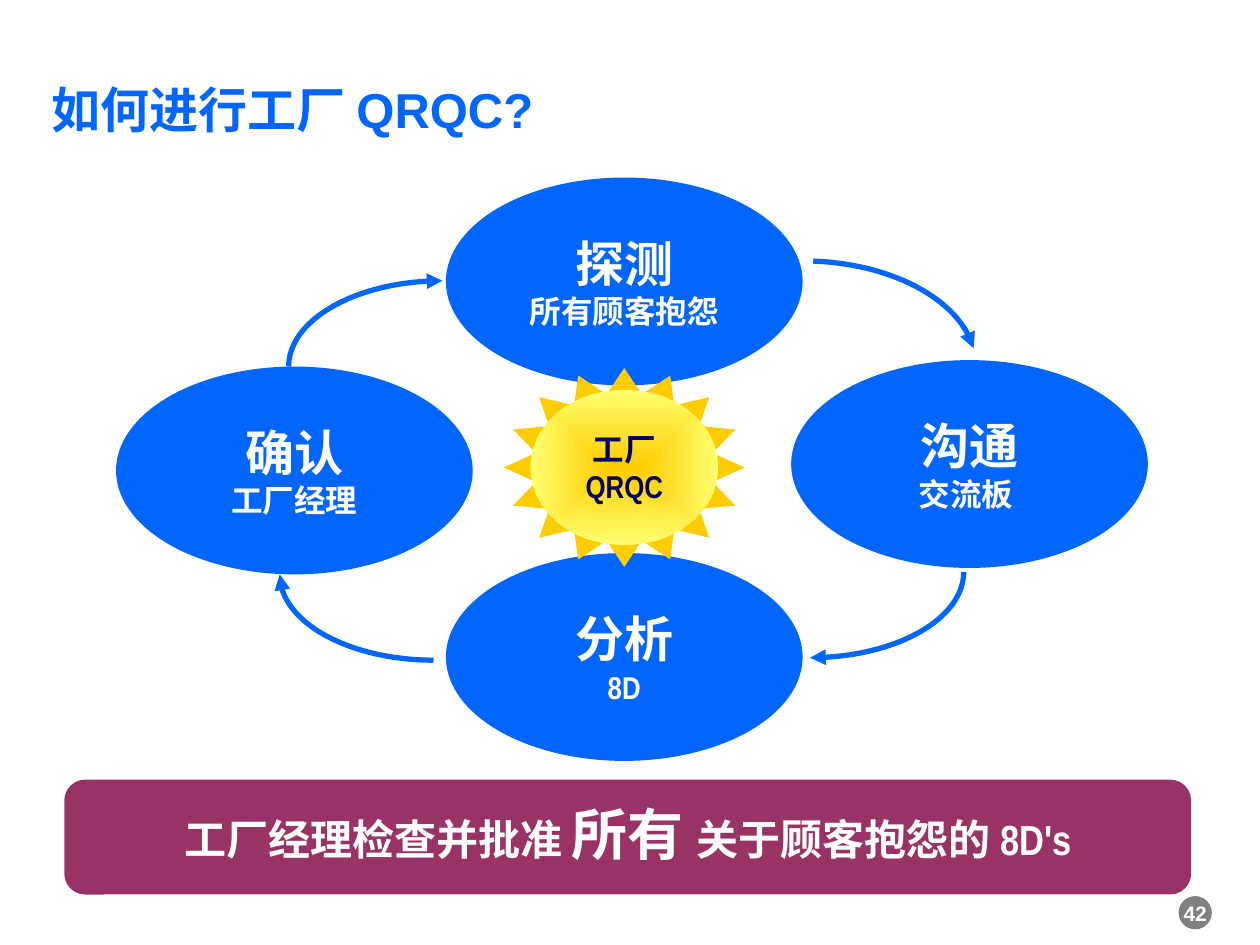
from dataclasses import dataclass
from math import cos, radians, sin

from pptx import Presentation
from pptx.dml.color import RGBColor as RGB
from pptx.enum.shapes import MSO_SHAPE as SHAPE
from pptx.enum.text import MSO_ANCHOR as ANCHOR, MSO_AUTO_SIZE as AUTO, PP_ALIGN as ALIGN
from pptx.oxml import parse_xml
from pptx.oxml.ns import nsdecls
from pptx.util import Cm, Pt


@dataclass(frozen=True)
class Theme:
    """Colours, fonts and type sizes of the slide."""
    blue: str = "0066FF"
    navy: str = "000066"
    plum: str = "993366"
    gold: str = "FFCC00"
    lemon: str = "FFFF6F"
    grey: str = "808080"
    white: str = "FFFFFF"
    sans: str = "Arial"
    narrow: str = "Arial Narrow"
    title: int = 28
    step: int = 28
    detail: int = 18
    banner: int = 24
    emphasis: int = 32
    number: int = 12
    line: int = 3


T = Theme()


def add_text(p, text, size=T.detail, color=T.white, font=T.narrow, align=ALIGN.CENTER):
    """Append a bold run to a paragraph."""
    p.alignment = align
    r = p.add_run()
    r.text = text
    r.font.name, r.font.size, r.font.bold = font, Pt(size), True
    r.font.color.rgb = RGB.from_string(color)


def add_shape(shapes, kind, x, y, w, h, fill):
    """Add a flat preset shape without outline, measured in centimetres."""
    sp = shapes.add_shape(kind, Cm(x), Cm(y), Cm(w), Cm(h))
    sp.shadow.inherit = False
    sp.fill.solid()
    sp.fill.fore_color.rgb = RGB.from_string(fill)
    sp.line.fill.background()
    sp.text_frame.vertical_anchor = ANCHOR.MIDDLE
    return sp


def add_lines(tf, lines, **fmt):
    """Write (text, size) pairs as the paragraphs of a text frame."""
    for i, (text, size) in enumerate(lines):
        p = tf.add_paragraph() if i else tf.paragraphs[0]
        add_text(p, text, size=size, **fmt)


def add_title(s, text, x, y, w, h):
    """Place the slide title."""
    sp = s.shapes.title
    sp.left, sp.top, sp.width, sp.height = Cm(x), Cm(y), Cm(w), Cm(h)
    tf = sp.text_frame
    tf.auto_size, tf.vertical_anchor = AUTO.NONE, ANCHOR.BOTTOM
    p = tf.paragraphs[0]
    p.line_spacing = Pt(30)
    add_text(p, text, size=T.title, color=T.blue, font=T.sans, align=ALIGN.LEFT)


def add_step(s, name, detail, x, y, w, h):
    """Add one oval step of the cycle."""
    tf = add_shape(s.shapes, SHAPE.OVAL, x, y, w, h, T.blue).text_frame
    tf.word_wrap = False
    add_lines(tf, [(name, T.step), (detail, T.detail)])


def add_arc(s, cx, cy, rx, ry, start, end, steps=24):
    """Add a clockwise elliptical arc with an arrowhead at its end."""
    angles = [radians(start + (end - start) * i / steps) for i in range(steps + 1)]
    points = [(Cm(cx + rx * cos(a)), Cm(cy + ry * sin(a))) for a in angles]
    builder = s.shapes.build_freeform(*points[0])
    builder.add_line_segments(points[1:], close=False)
    sp = builder.convert_to_shape()
    sp.shadow.inherit = False
    sp.fill.background()
    sp.line.color.rgb = RGB.from_string(T.blue)
    sp.line.width = Pt(T.line)
    sp.line._get_or_add_ln().append(parse_xml(f'<a:tailEnd {nsdecls("a")} type="triangle"/>'))


def add_sun(s, x, y, w, h):
    """Add the grouped sun with its glowing core."""
    group = s.shapes.add_group_shape().shapes
    rays = add_shape(group, SHAPE.STAR_16_POINT, x, y, w, h, T.gold)
    rays.adjustments[0] = 0.375
    dx, dy = 0.11 * w, 0.11 * h
    core = add_shape(group, SHAPE.OVAL, x + dx, y + dy, w - 2 * dx, h - 2 * dy, T.gold)
    core.fill.gradient()
    for stop, color, position in zip(core.fill.gradient_stops, (T.gold, T.lemon), (0, 1)):
        stop.color.rgb, stop.position = RGB.from_string(color), position
    lin = core._element.spPr.find(".//{*}lin")
    lin.getparent().replace(lin, parse_xml(
        f'<a:path {nsdecls("a")} path="shape">'
        '<a:fillToRect l="50000" t="50000" r="50000" b="50000"/></a:path>'))
    add_lines(core.text_frame, [("工厂", T.detail), ("QRQC", T.detail)], color=T.navy)


def add_cycle(s, x, y, w, h):
    """Add the four steps, the arrows between them and the sun in the middle."""
    ow, oh = 7.19, 4.19
    mid = x + 6.65
    for name, detail, left, top in (
        ("探测", "所有顾客抱怨", mid, y),
        ("沟通", "交流板 ", x + w - ow, y + 3.68),
        ("分析", "8D", mid, y + h - oh),
        ("确认", "工厂经理", x, y + 3.81),
    ):
        add_step(s, name, detail, left, top, ow, oh)
    rx, ry = 3.1, 1.73
    add_arc(s, x + 13.84, y + 3.81, 3.5, 2.13, -86.5, -10)
    add_arc(s, x + 13.99, y + 7.95, rx, ry, 0, 90)
    add_arc(s, x + 6.4, y + 8, rx, ry, 90, 180)
    add_arc(s, x + 6.58, y + 3.81, rx, ry, 180, 270)
    add_sun(s, x + 7.82, y + 3.84, 4.85, 4.01)


def add_banner(s, x, y, w, h):
    """Add the concluding rounded bar."""
    sp = add_shape(s.shapes, SHAPE.ROUNDED_RECTANGLE, x, y, w, h, T.plum)
    sp.line.color.rgb = RGB.from_string(T.plum)
    sp.line.width = Pt(T.line)
    sp.text_frame.word_wrap = False
    p = sp.text_frame.paragraphs[0]
    p.line_spacing = 0.9
    add_text(p, "工厂经理检查并批准 ", size=T.banner)
    add_text(p, "所有 ", size=T.emphasis)
    add_text(p, "关于顾客抱怨的 8D's", size=T.banner)


def add_number(s, text, x, y, w, h):
    """Add the page number on its grey disc."""
    d = 0.67
    add_shape(s.shapes, SHAPE.OVAL, x + (w - d) / 2, y + (h - d) / 2, d, d, T.grey)
    tf = s.shapes.add_textbox(Cm(x), Cm(y), Cm(w), Cm(h)).text_frame
    tf.word_wrap, tf.vertical_anchor = True, ANCHOR.MIDDLE
    add_lines(tf, [(text, T.number)], font=T.sans)


def main():
    """Build and save the slide."""
    prs = Presentation()
    prs.slide_width, prs.slide_height = Cm(25.4), Cm(19.05)
    s = prs.slides.add_slide(prs.slide_layouts[5])
    add_number(s, "42", 23.22, 17.93, 1.75, 0.94)
    add_cycle(s, 2.34, 3.58, 20.8, 11.76)
    add_title(s, "如何进行工厂 QRQC?", 0.79, 0.81, 23.44, 2.11)
    add_banner(s, 1.35, 15.77, 22.61, 2.21)
    prs.save("out.pptx")


if __name__ == "__main__":
    main()
